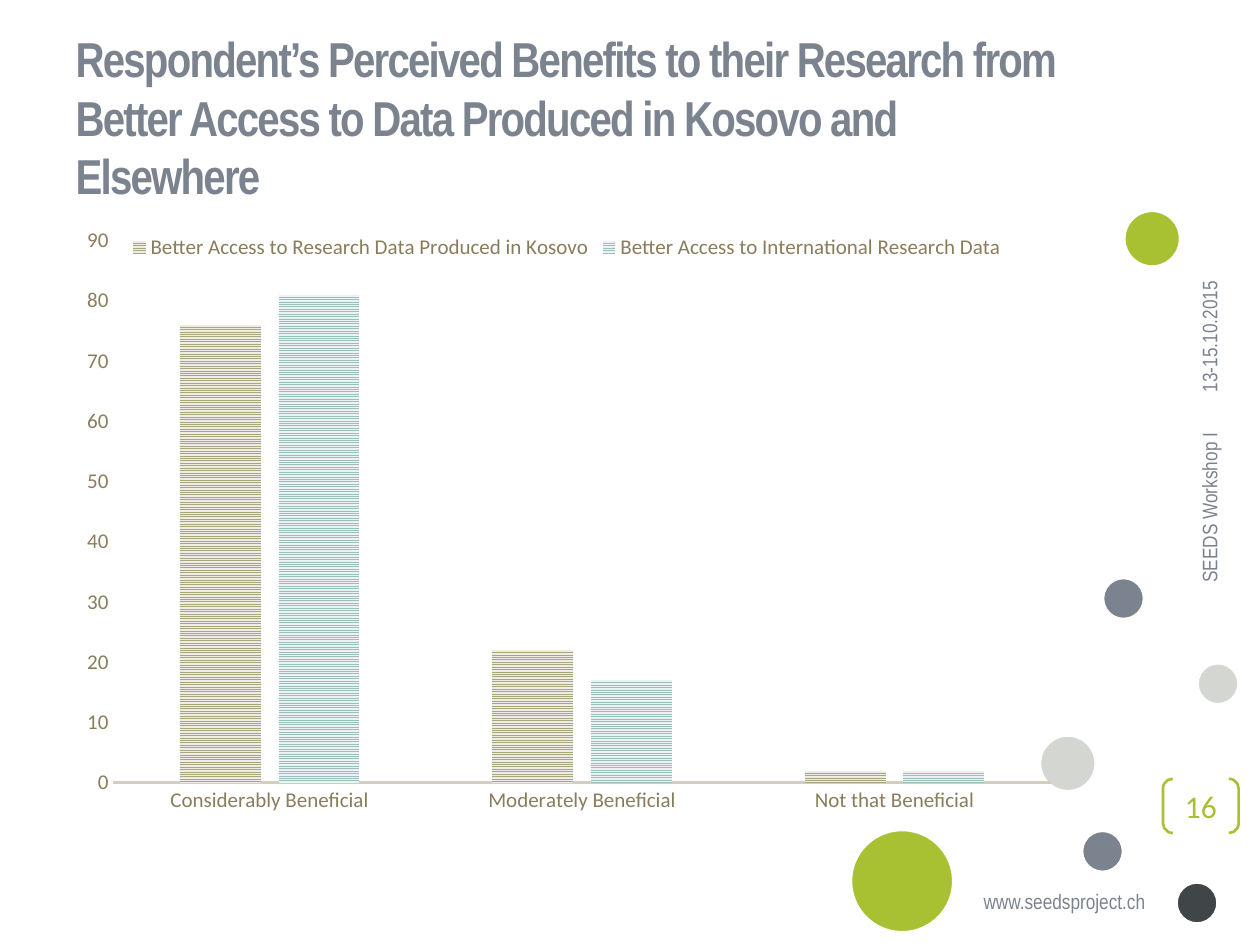
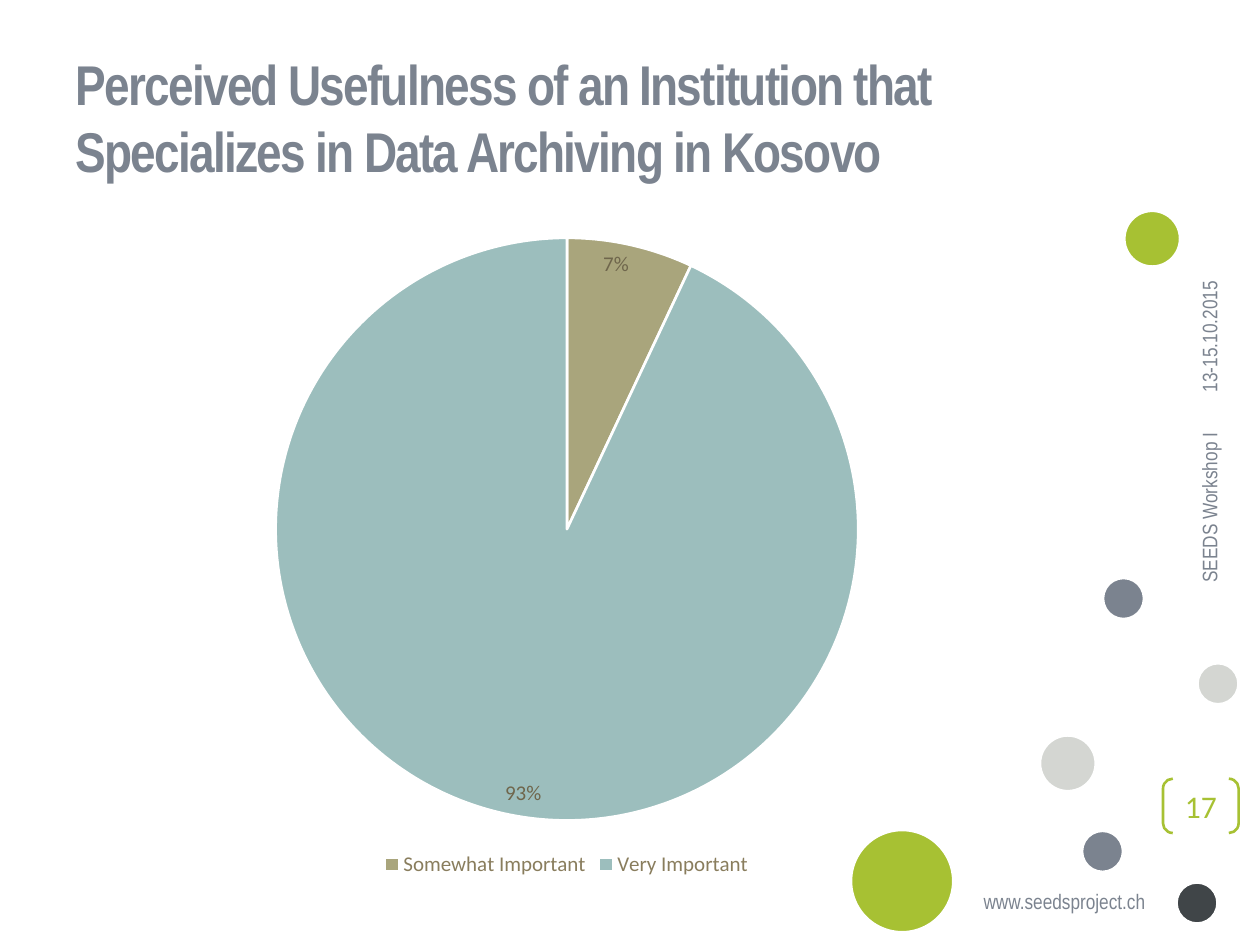
from lxml.etree import SubElement
from pptx import Presentation
from pptx.chart.data import CategoryChartData
from pptx.dml.color import RGBColor
from pptx.enum.chart import XL_CHART_TYPE, XL_LABEL_POSITION, XL_LEGEND_POSITION, XL_TICK_MARK
from pptx.enum.dml import MSO_PATTERN
from pptx.enum.shapes import MSO_SHAPE
from pptx.enum.text import MSO_ANCHOR, MSO_AUTO_SIZE, PP_ALIGN
from pptx.oxml.ns import qn
from pptx.util import Pt

COLORS = {
    "green": "A7C133", "slate": "7B838F", "silver": "D4D6D2", "charcoal": "404548",
    "white": "FFFFFF", "olive": "A9A57C", "pale_olive": "EEEDE5",
    "teal": "9CBEBD", "pale_teal": "EBF2F2", "axis_line": "D3CEBF",
    "axis_text": "897D5D", "label_text": "6F664C", "chart_text": "2F2B20",
}
NARROW, BODY = "Arial Narrow", "Calibri"
CHART_BOX = (36, 126, 576, 378)
LARGE, MEDIUM, SMALL = 59, 32.4, 24
# left, top, diameter, colour
CIRCLES = [
    (486, 474, LARGE, "green"),
    (642.2, 120.2, MEDIUM, "green"),
    (672, 504, SMALL, "charcoal"),
    (594, 420, MEDIUM, "silver"),
    (684, 378.7, SMALL, "silver"),
    (618, 474.5, SMALL, "slate"),
    (630, 330, SMALL, "slate"),
]


def rgb(name):
    return RGBColor.from_string(COLORS[name])


def points(*lengths):
    return [Pt(length) for length in lengths]


def set_font(font, size, color, name=BODY, bold=False):
    font.size = Pt(size)
    font.name = name
    font.bold = bold
    font.color.rgb = rgb(color)


def add_circle(s, left, top, diameter, color):
    circle = s.shapes.add_shape(MSO_SHAPE.OVAL, *points(left, top, diameter, diameter))
    circle.shadow.inherit = False
    circle.fill.solid()
    circle.fill.fore_color.rgb = rgb(color)
    circle.line.color.rgb = rgb("white")
    circle.line.width = Pt(2)


def add_note(s, text, box, align=PP_ALIGN.LEFT, rotation=0, wrap=True, anchor=MSO_ANCHOR.MIDDLE):
    """Add one of the small grey texts at the slide's edge."""
    note = s.shapes.add_textbox(*points(*box))
    note.rotation = rotation
    tf = note.text_frame
    tf.text = text
    tf.word_wrap = wrap
    tf.vertical_anchor = anchor
    p = tf.paragraphs[0]
    p.alignment = align
    set_font(p.runs[0].font, 12, "slate", NARROW)


def add_page_number(s, number):
    bracket = s.shapes.add_shape(MSO_SHAPE.DOUBLE_BRACKET, *points(664.6, 445, 43.2, 31))
    bracket.adjustments[0] = 0.18
    bracket.shadow.inherit = False
    bracket.fill.background()
    bracket.line.color.rgb = rgb("green")
    bracket.line.width = Pt(1.5)
    tf = bracket.text_frame
    tf.margin_left = tf.margin_right = tf.margin_top = tf.margin_bottom = 0
    tf.vertical_anchor = MSO_ANCHOR.MIDDLE
    tf.text = str(number)
    p = tf.paragraphs[0]
    p.alignment = PP_ALIGN.CENTER
    set_font(p.runs[0].font, 18, "green")


def set_title(s, text, size):
    title = s.shapes.title
    title.left, title.top, title.width, title.height = points(36, 21.6, 576, 90)
    tf = title.text_frame
    tf.text = text
    tf.word_wrap = True
    tf.auto_size = MSO_AUTO_SIZE.NONE
    tf.vertical_anchor = MSO_ANCHOR.MIDDLE
    p = tf.paragraphs[0]
    p.alignment = PP_ALIGN.LEFT
    r = p.runs[0]
    set_font(r.font, size, "slate", NARROW, bold=True)
    r.font._element.set("spc", "-100")


def add_slide(prs, title, title_size, number):
    """Add a slide with the shared circles, edge texts, page number and title."""
    s = prs.slides.add_slide(prs.slide_layouts[5])
    for circle in CIRCLES:
        add_circle(s, *circle)
    add_note(s, "www.seedsproject.ch", (555, 504, 111, 21.6), wrap=False, anchor=MSO_ANCHOR.TOP)
    add_page_number(s, number)
    add_note(s, "SEEDS Workshop I", (627.8, 290.2, 126, 26), PP_ALIGN.RIGHT, 270)
    add_note(s, "13-15.10.2015", (644.4, 172.8, 93, 23.8), rotation=270)
    set_title(s, title, title_size)
    return s


def add_chart(s, kind, categories, series, legend_position):
    data = CategoryChartData()
    data.categories = categories
    for name, values in series:
        data.add_series(name, values)
    chart = s.shapes.add_chart(kind, *points(*CHART_BOX), data).chart
    chart.has_title = False
    set_font(chart.font, 10, "chart_text")
    chart.has_legend = True
    chart.legend.position = legend_position
    chart.legend.include_in_layout = False
    set_font(chart.legend.font, 12, "axis_text")
    return chart


def place_plot(chart, x, y, w, h):
    """Fix the inner plot area, in fractions of the chart."""
    area = chart._chartSpace.chart.plotArea
    for layout in area.findall(qn("c:layout")):
        area.remove(layout)
    layout = SubElement(area, qn("c:layout"))
    area.insert(0, layout)
    manual = SubElement(layout, qn("c:manualLayout"))
    settings = {"layoutTarget": "inner", "xMode": "edge", "yMode": "edge",
                "x": x, "y": y, "w": w, "h": h}
    for tag, value in settings.items():
        SubElement(manual, qn("c:" + tag)).set("val", str(value))


def add_benefit_columns(s):
    chart = add_chart(
        s, XL_CHART_TYPE.COLUMN_CLUSTERED,
        ["Considerably Beneficial", "Moderately Beneficial", "Not that Beneficial"],
        [("Better Access to Research Data Produced in Kosovo", (76, 22, 2)),
         ("Better Access to International Research Data", (81, 17, 2))],
        XL_LEGEND_POSITION.TOP)
    place_plot(chart, 0.05, 0.03, 0.93, 0.82)
    plot = chart.plots[0]
    plot.gap_width = 164
    plot.overlap = -22
    plot.vary_by_categories = False
    for series, color in zip(plot.series, ("olive", "teal")):
        fill = series.format.fill
        fill.patterned()
        fill.pattern = MSO_PATTERN.NARROW_HORIZONTAL
        fill.fore_color.rgb = rgb(color)
        fill.back_color.rgb = rgb("pale_" + color)
    for axis in (chart.category_axis, chart.value_axis):
        axis.has_major_gridlines = False
        axis.major_tick_mark = axis.minor_tick_mark = XL_TICK_MARK.NONE
        set_font(axis.tick_labels.font, 12, "axis_text")
    chart.category_axis.format.line.color.rgb = rgb("axis_line")
    chart.category_axis.format.line.width = Pt(1.5)
    values = chart.value_axis
    values.format.line.fill.background()
    values.minimum_scale, values.maximum_scale, values.major_unit = 0, 90, 10


def add_usefulness_pie(s):
    chart = add_chart(
        s, XL_CHART_TYPE.PIE, ["Somewhat Important", "Very Important"],
        [("Series 1", (7, 93))], XL_LEGEND_POSITION.BOTTOM)
    plot = chart.plots[0]
    plot.vary_by_categories = True
    for i, color in enumerate(("olive", "teal")):
        slice_format = plot.series[0].points[i].format
        slice_format.fill.solid()
        slice_format.fill.fore_color.rgb = rgb(color)
        slice_format.line.color.rgb = rgb("white")
        slice_format.line.width = Pt(1.5)
    plot.has_data_labels = True
    labels = plot.data_labels
    labels.show_percentage = True
    labels.show_value = False
    labels.number_format = "0%"
    labels.number_format_is_linked = False
    labels.position = XL_LABEL_POSITION.INSIDE_END
    set_font(labels.font, 12, "label_text")


def main():
    prs = Presentation()
    prs.slide_width, prs.slide_height = points(720, 540)
    s = add_slide(prs, "Respondent’s Perceived Benefits to their Research from Better Access "
                  "to Data Produced in Kosovo and Elsewhere", 28, 16)
    add_benefit_columns(s)
    s = add_slide(prs, "Perceived Usefulness of an Institution that Specializes in Data "
                  "Archiving in Kosovo", 32, 17)
    add_usefulness_pie(s)
    prs.save("out.pptx")


if __name__ == "__main__":
    main()
